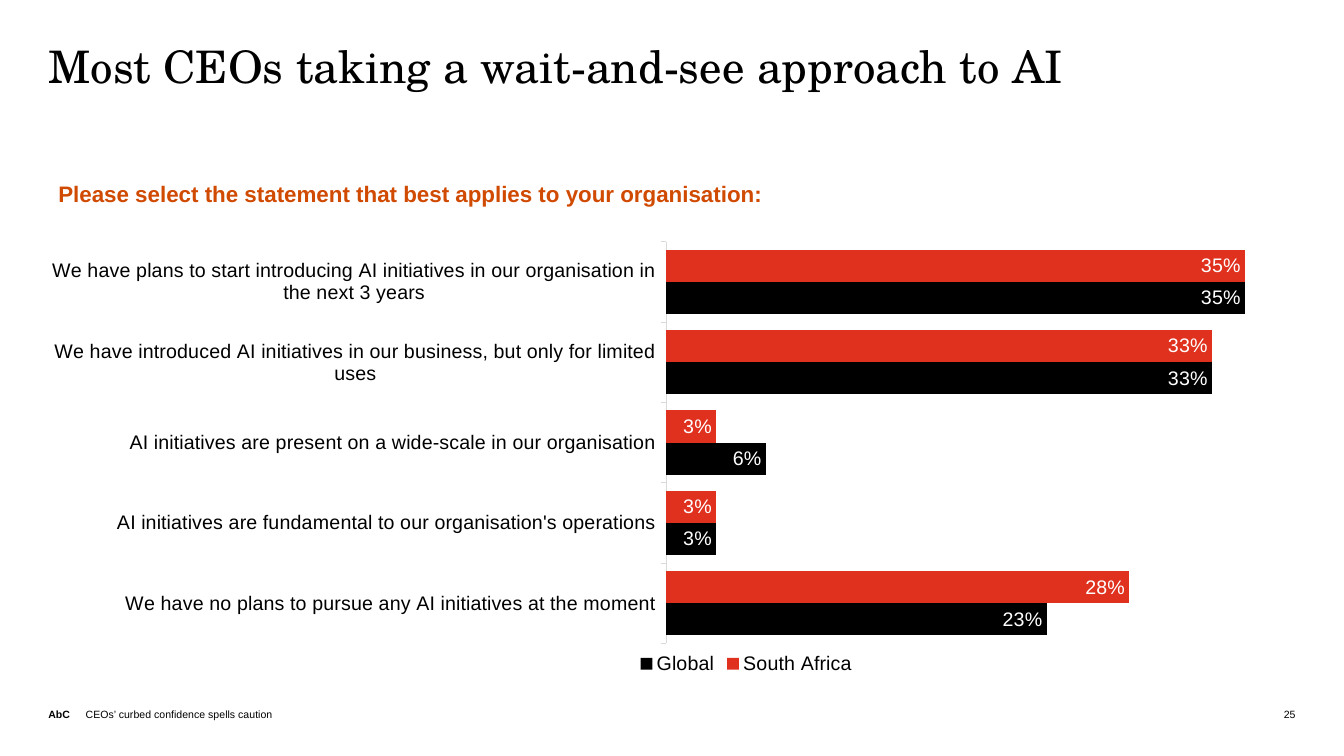
import pptx
import pptx.chart.data
import pptx.dml.color
import pptx.enum.chart
import pptx.enum.text
import pptx.oxml
import pptx.util

PX = 9144
INK = {"black": "000000", "white": "FFFFFF", "red": "E0301E",
       "orange": "D04A02", "grey": "D9D9D9"}
CATS = [
    "We have plans to start introducing AI initiatives in our organisation in the next 3 years",
    "We have introduced AI initiatives in our business, but only for limited uses",
    "AI initiatives are present on a wide-scale in our organisation",
    "AI initiatives are fundamental to our organisation's operations",
    "We have no plans to pursue any AI initiatives at the moment",
]
DATA = [
    ("South Africa", "red", [0.35, 0.33, 0.03, 0.03, 0.28]),
    ("Global", "black", [0.35, 0.33, 0.06, 0.03, 0.23]),
]


def color(name):
    return pptx.dml.color.RGBColor.from_string(INK[name])


class Deck:
    body = "Arial"
    head = "TeX Gyre Schola"

    def __init__(self, wide, high):
        self.prs = pptx.Presentation()
        self.prs.slide_width = wide * PX
        self.prs.slide_height = high * PX
        self.slide = self.prs.slides.add_slide(self.prs.slide_layouts[5])

    def style(self, font, size, ink="black", bold=False, face=None):
        font.name = face or self.body
        font.size = pptx.util.Pt(size)
        font.bold = bold
        font.color.rgb = color(ink)

    def fill(self, frame, words, size, ink, bold, align, anchor, pad, face=None):
        frame.text = words
        frame.word_wrap = True
        frame.auto_size = pptx.enum.text.MSO_AUTO_SIZE.NONE
        frame.vertical_anchor = anchor
        frame.margin_left = frame.margin_right = pad * 2 * PX
        frame.margin_top = frame.margin_bottom = pad * PX
        para = frame.paragraphs[0]
        para.alignment = align
        self.style(para.runs[0].font, size, ink, bold, face)
        return para

    def title(self, box, words):
        shape = self.slide.shapes.title
        shape.left, shape.top, shape.width, shape.height = [n * PX for n in box]
        para = self.fill(shape.text_frame, words, 32, "black", False,
                         pptx.enum.text.PP_ALIGN.LEFT,
                         pptx.enum.text.MSO_ANCHOR.TOP, 0, self.head)
        para.line_spacing = 0.85

    def text(self, box, words, size=7.5, ink="black", bold=False,
             align=pptx.enum.text.PP_ALIGN.LEFT,
             anchor=pptx.enum.text.MSO_ANCHOR.BOTTOM, pad=0):
        shape = self.slide.shapes.add_textbox(*[n * PX for n in box])
        self.fill(shape.text_frame, words, size, ink, bold, align, anchor, pad)

    def place(self, part, inner, **spots):
        old = part.find(pptx.oxml.ns.qn("c:layout"))
        if old is not None:
            part.remove(old)
        modes = "".join(f'<c:{k}Mode val="edge"/>' for k in "xy")
        sizes = "".join(f'<c:{k} val="{v}"/>' for k, v in spots.items())
        target = '<c:layoutTarget val="inner"/>' if inner else ""
        return pptx.oxml.parse_xml(
            f'<c:layout {pptx.oxml.ns.nsdecls("c")}><c:manualLayout>'
            f'{target}{modes}{sizes}</c:manualLayout></c:layout>')

    def bars(self, box, cats, data):
        feed = pptx.chart.data.CategoryChartData(number_format="0%")
        feed.categories = cats
        for name, _, vals in data:
            feed.add_series(name, vals)
        chart = self.slide.shapes.add_chart(
            pptx.enum.chart.XL_CHART_TYPE.BAR_CLUSTERED,
            *[n * PX for n in box], feed).chart
        chart.has_title = False
        self.style(chart.font, 14)
        plot = chart.plots[0]
        plot.gap_width = 50
        plot.overlap = 0
        plot.vary_by_categories = False
        for row, (_, ink, _) in zip(plot.series, data):
            row.format.fill.solid()
            row.format.fill.fore_color.rgb = color(ink)
            tags = row.data_labels
            tags.show_value = True
            tags.number_format = "0%"
            tags.number_format_is_linked = False
            tags.position = pptx.enum.chart.XL_LABEL_POSITION.INSIDE_END
            self.style(tags.font, 14, "white")
        axis = chart.category_axis
        axis.reverse_order = True
        axis.major_tick_mark = pptx.enum.chart.XL_TICK_MARK.OUTSIDE
        axis.format.line.color.rgb = color("grey")
        axis.format.line.width = pptx.util.Pt(0.75)
        self.style(axis.tick_labels.font, 14)
        scale = chart.value_axis
        scale.minimum_scale = 0
        scale.maximum_scale = 0.38
        scale.has_major_gridlines = False
        scale.visible = False
        area = plot._element.getparent()
        area.insert(0, self.place(area, True, x=0.496, y=0.021, w=0.504, h=0.848))
        chart.has_legend = True
        key = chart.legend
        key.position = pptx.enum.chart.XL_LEGEND_POSITION.BOTTOM
        key.include_in_layout = False
        self.style(key.font, 14)
        part = key._element
        spot = self.place(part, False, x=0.47, y=0.88)
        part.find(pptx.oxml.ns.qn("c:legendPos")).addnext(spot)


def main():
    deck = Deck(1333, 750)
    deck.title((48, 47, 1236, 152), "Most CEOs taking a wait-and-see approach to AI")
    deck.text((48, 174, 1244, 64),
              "Please select the statement that best applies to your organisation:",
              16, "orange", True, anchor=pptx.enum.text.MSO_ANCHOR.TOP, pad=5)
    deck.bars((48, 230, 1236, 470), CATS, DATA)
    deck.text((48, 700, 33, 15), "AbC", bold=True)
    deck.text((85, 700, 562, 15), "CEOs’ curbed confidence spells caution")
    deck.text((1239, 700, 46, 15), "25", align=pptx.enum.text.PP_ALIGN.RIGHT)
    deck.prs.save("out.pptx")


if __name__ == "__main__":
    main()
